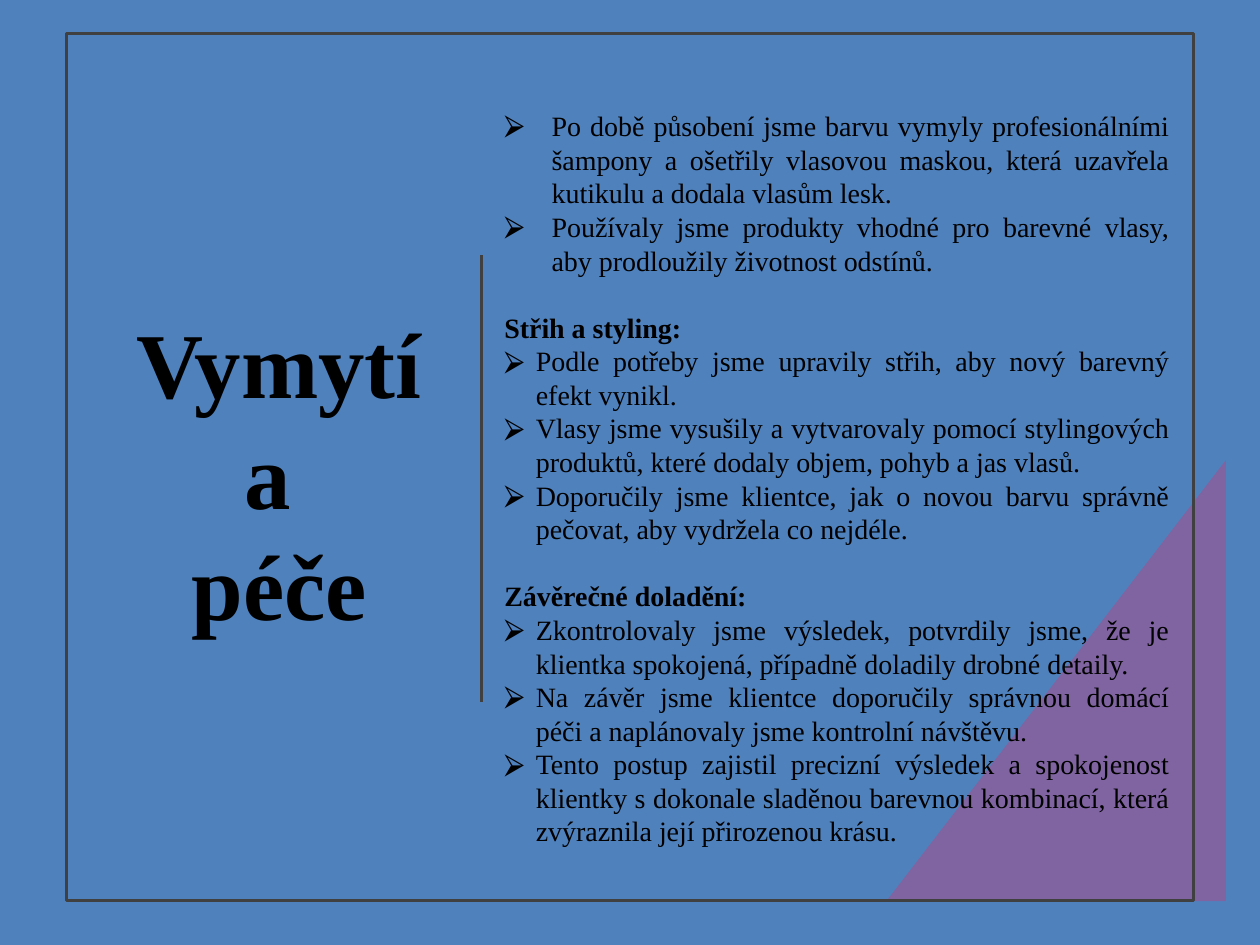
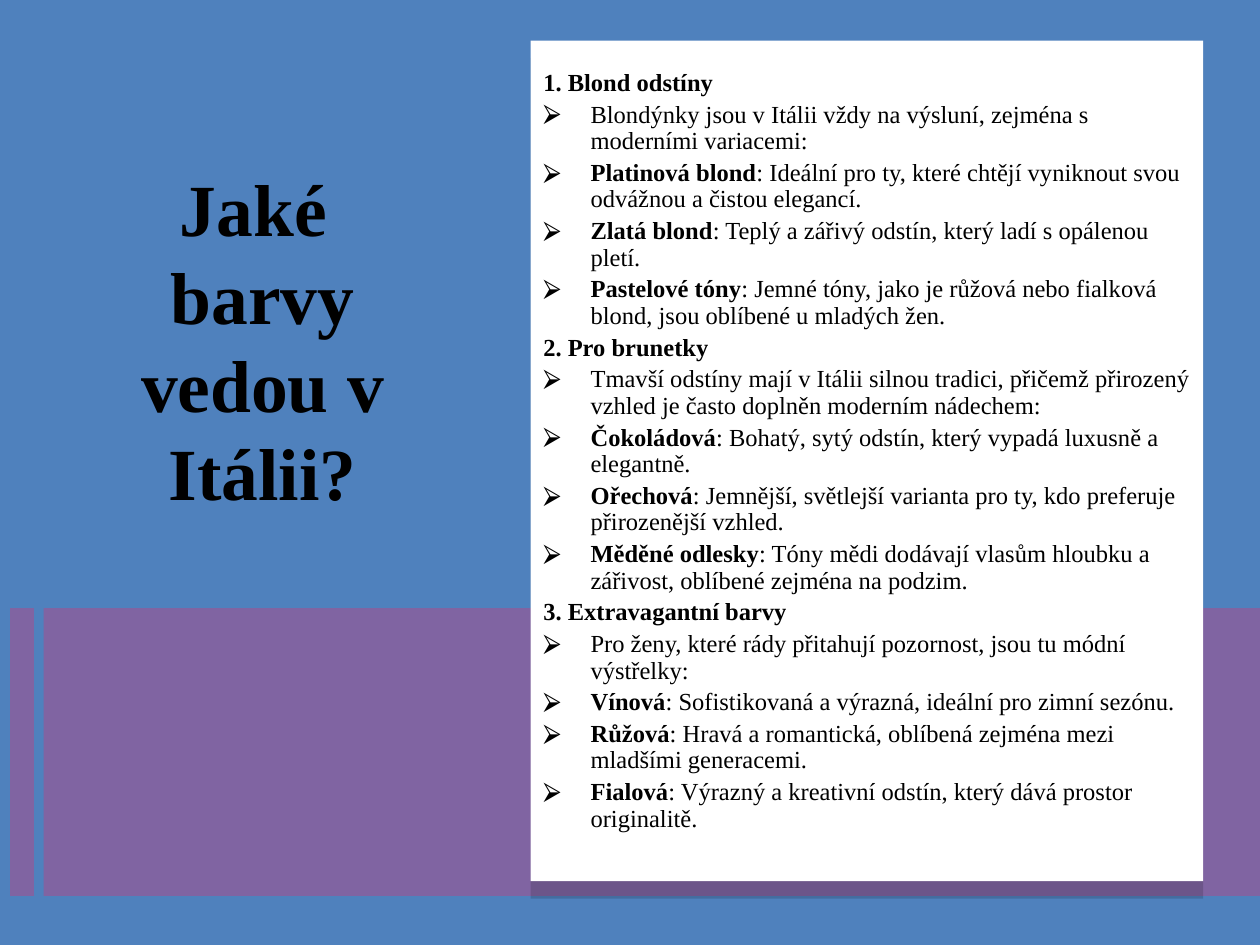
from dataclasses import dataclass

from lxml import etree
from pptx import Presentation
from pptx.dml.color import RGBColor
from pptx.enum import shapes, text
from pptx.oxml import ns
from pptx.util import Pt


@dataclass(frozen=True)
class Theme:
    """Colours, font and type sizes shared by the slides."""
    blue: str = "4F81BD"
    purple: str = "8064A2"
    white: str = "FFFFFF"
    dark: str = "404040"
    black: str = "000000"
    font: str = "Times New Roman"
    bullet: str = "⮚"
    care_title: float = 53
    trend_title: float = 42
    care_body: float = 16
    trend_body: float = 14
    rule: float = 1.5


@dataclass(frozen=True)
class ListStyle:
    """Paragraph settings of a bulleted list."""
    size: float
    alignment: text.PP_ALIGN
    line_spacing: float = 1.0
    item_gap: float = 0
    heading_gap: float = 0


@dataclass(frozen=True)
class Section:
    """A heading with its bulleted items."""
    heading: str
    items: tuple
    indent: float = 27
    level: int = 0


THEME = Theme()
WIDTH, HEIGHT = 720, 540

CARE_SECTIONS = (
    Section("", (
        "Po době působení jsme barvu vymyly profesionálními šampony a ošetřily "
        "vlasovou maskou, která uzavřela kutikulu a dodala vlasům lesk.",
        "Používaly jsme produkty vhodné pro barevné vlasy, aby prodloužily životnost odstínů.",
    )),
    Section("Střih a styling:", (
        "Podle potřeby jsme upravily střih, aby nový barevný efekt vynikl.",
        "Vlasy jsme vysušily a vytvarovaly pomocí stylingových produktů, které "
        "dodaly objem, pohyb a jas vlasů.",
        "Doporučily jsme klientce, jak o novou barvu správně pečovat, aby vydržela co nejdéle.",
    ), indent=18, level=1),
    Section("Závěrečné doladění:", (
        "Zkontrolovaly jsme výsledek, potvrdily jsme, že je klientka spokojená, "
        "případně doladily drobné detaily.",
        "Na závěr jsme klientce doporučily správnou domácí péči a naplánovaly "
        "jsme kontrolní návštěvu.",
        "Tento postup zajistil precizní výsledek a spokojenost klientky s dokonale "
        "sladěnou barevnou kombinací, která zvýraznila její přirozenou krásu.",
    ), indent=18, level=1),
)

TREND_SECTIONS = (
    Section("1. Blond odstíny", (
        "Blondýnky jsou v Itálii vždy na výsluní, zejména s moderními variacemi:",
        "Platinová blond: Ideální pro ty, které chtějí vyniknout svou odvážnou a čistou elegancí.",
        "Zlatá blond: Teplý a zářivý odstín, který ladí s opálenou pletí.",
        "Pastelové tóny: Jemné tóny, jako je růžová nebo fialková blond, jsou "
        "oblíbené u mladých žen.",
    )),
    Section("2. Pro brunetky", (
        "Tmavší odstíny mají v Itálii silnou tradici, přičemž přirozený vzhled je "
        "často doplněn moderním nádechem:",
        "Čokoládová: Bohatý, sytý odstín, který vypadá luxusně a elegantně.",
        "Ořechová: Jemnější, světlejší varianta pro ty, kdo preferuje přirozenější vzhled.",
        "Měděné odlesky: Tóny mědi dodávají vlasům hloubku a zářivost, oblíbené "
        "zejména na podzim.",
    )),
    Section("3. Extravagantní barvy", (
        "Pro ženy, které rády přitahují pozornost, jsou tu módní výstřelky:",
        "Vínová: Sofistikovaná a výrazná, ideální pro zimní sezónu.",
        "Růžová: Hravá a romantická, oblíbená zejména mezi mladšími generacemi.",
        "Fialová: Výrazný a kreativní odstín, který dává prostor originalitě.",
    )),
)


def color(value):
    """Return the colour object for a hex value."""
    return RGBColor.from_string(value)


def add_element(parent, tag, **attributes):
    """Append a DrawingML element and return it."""
    return etree.SubElement(parent, ns.qn(tag), attributes)


def paint(shape, fill=None, line=None):
    """Set the fill and outline of a shape and remove its shadow."""
    shape.shadow.inherit = False
    if fill:
        shape.fill.solid()
        shape.fill.fore_color.rgb = color(fill)
    else:
        shape.fill.background()
    if line:
        shape.line.color.rgb = color(line)
        shape.line.width = Pt(THEME.rule)
    else:
        shape.line.fill.background()


def add_rectangle(slide, left, top, width, height, fill=None, line=None):
    """Add a plain rectangle."""
    shape = slide.shapes.add_shape(
        shapes.MSO_SHAPE.RECTANGLE, Pt(left), Pt(top), Pt(width), Pt(height))
    paint(shape, fill, line)
    return shape


def add_polygon(slide, points, fill):
    """Add a closed filled outline through the points."""
    start, *others = [(Pt(x), Pt(y)) for x, y in points]
    builder = slide.shapes.build_freeform(*start)
    builder.add_line_segments(others, close=True)
    paint(builder.convert_to_shape(), fill)


def add_vertical_line(slide, x, top, bottom, line, width):
    """Add a vertical straight line."""
    connector = slide.shapes.add_connector(
        shapes.MSO_CONNECTOR.STRAIGHT, Pt(x), Pt(top), Pt(x), Pt(bottom))
    connector.line.color.rgb = color(line)
    connector.line.width = Pt(width)
    add_element(connector.element.spPr, "a:effectLst")


def add_drop_shadow(shape, distance, opacity):
    """Give a shape a hard shadow straight below it."""
    effects = shape.element.spPr.find(ns.qn("a:effectLst"))
    shadow = add_element(effects, "a:outerShdw", blurRad="0", dist=str(Pt(distance)),
                         dir="5400000", algn="t", rotWithShape="0")
    tint = add_element(shadow, "a:srgbClr", val=THEME.black)
    add_element(tint, "a:alpha", val=str(opacity * 1000))


def place(placeholder, left, top, width, height, anchor):
    """Move a placeholder to the front and to its box, and return its text frame."""
    placeholder.left, placeholder.top = Pt(left), Pt(top)
    placeholder.width, placeholder.height = Pt(width), Pt(height)
    placeholder.element.getparent().append(placeholder.element)
    frame = placeholder.text_frame
    frame.word_wrap = True
    frame.auto_size = text.MSO_AUTO_SIZE.NONE
    frame.vertical_anchor = anchor
    return frame


def format_paragraph(paragraph, size, alignment, bold=None):
    """Set alignment and font of a paragraph."""
    paragraph.alignment = alignment
    paragraph.font.name = THEME.font
    paragraph.font.size = Pt(size)
    paragraph.font.bold = bold
    paragraph.font.color.rgb = color(THEME.black)


def next_paragraph(frame):
    """Return the empty first paragraph, or a new one."""
    first = frame.paragraphs[0]
    return frame.add_paragraph() if first.runs else first


def fill_title(slide, lines, size, box, anchor):
    """Write the bold centred title."""
    frame = place(slide.shapes.title, *box, anchor)
    for line in lines:
        paragraph = next_paragraph(frame)
        paragraph.add_run().text = line
        format_paragraph(paragraph, size, text.PP_ALIGN.CENTER, True)


def set_bullet(paragraph, indent):
    """Give a paragraph an arrow bullet, or none when the indent is zero."""
    properties = paragraph._p.get_or_add_pPr()
    properties.set("marL", str(Pt(indent)))
    properties.set("indent", str(-Pt(indent)))
    if indent:
        add_element(add_element(properties, "a:buClr"), "a:srgbClr", val=THEME.black)
        add_element(properties, "a:buFont", typeface=THEME.font)
        add_element(properties, "a:buChar", char=THEME.bullet)
    else:
        add_element(properties, "a:buNone")


def add_list_line(frame, parts, style, gap, indent=0, level=0):
    """Add one list paragraph from (text, bold) parts."""
    paragraph = next_paragraph(frame)
    is_first = len(frame.paragraphs) == 1
    paragraph.level = level
    set_bullet(paragraph, indent)
    paragraph.line_spacing = style.line_spacing
    paragraph.space_before = Pt(0 if is_first else gap)
    paragraph.space_after = Pt(0)
    for words, bold in parts:
        run = paragraph.add_run()
        run.text = words
        run.font.bold = bold
    format_paragraph(paragraph, style.size, style.alignment)


def fill_list(slide, sections, style, box, anchor):
    """Write headed sections, with the term before a colon in bold."""
    frame = place(slide.placeholders[1], *box, anchor)
    for section in sections:
        if section.heading:
            add_list_line(frame, [(section.heading, True)], style, style.heading_gap)
        for item in section.items:
            term, colon, rest = item.partition(": ")
            parts = [(term, True), (colon + rest, False)] if colon else [(item, False)]
            add_list_line(frame, parts, style, style.item_gap, section.indent, section.level)


def add_slide(presentation):
    """Add a title-and-list slide with the blue backdrop."""
    slide = presentation.slides.add_slide(presentation.slide_layouts[1])
    add_rectangle(slide, 0, 0, WIDTH, HEIGHT, THEME.blue)
    return slide


def build_care_slide(presentation):
    """Build the slide on washing out and care."""
    slide = add_slide(presentation)
    add_polygon(slide, [(700.5, 515), (700.5, 263), (506.5, 515)], THEME.purple)
    add_rectangle(slide, 38, 19.25, 644, 495.5, line=THEME.dark)
    fill_title(slide, ["Vymytí a ", "péče"], THEME.care_title,
               (63.5, 93.5, 192, 353), text.MSO_ANCHOR.MIDDLE)
    add_vertical_line(slide, 275, 146, 401, THEME.dark, THEME.rule)
    style = ListStyle(THEME.care_body, text.PP_ALIGN.JUSTIFY, heading_gap=19.2)
    fill_list(slide, CARE_SECTIONS, style, (281, 57.5, 394.5, 431.5), text.MSO_ANCHOR.MIDDLE)


def build_trend_slide(presentation):
    """Build the slide on colour trends in Italy."""
    slide = add_slide(presentation)
    fill_title(slide, ["Jaké ", "barvy vedou v Itálii?"], THEME.trend_title,
               (38, 89.25, 224, 237.5), text.MSO_ANCHOR.TOP)
    band_top, band_bottom = 347.5, 512
    add_rectangle(slide, 25, band_top, WIDTH - 25, band_bottom - band_top, THEME.purple)
    add_vertical_line(slide, 12.5, band_top, band_bottom, THEME.purple, 14)
    panel = add_rectangle(slide, 303.25, 23.25, 384.25, 480.25, THEME.white)
    add_drop_shadow(panel, distance=10, opacity=15)
    style = ListStyle(THEME.trend_body, text.PP_ALIGN.LEFT, 0.9, item_gap=3, heading_gap=3)
    fill_list(slide, TREND_SECTIONS, style, (303.25, 36.5, 384.25, 467), text.MSO_ANCHOR.TOP)


def main():
    """Build and save the presentation."""
    presentation = Presentation()
    presentation.slide_width, presentation.slide_height = Pt(WIDTH), Pt(HEIGHT)
    build_care_slide(presentation)
    build_trend_slide(presentation)
    presentation.save("out.pptx")


if __name__ == "__main__":
    main()
